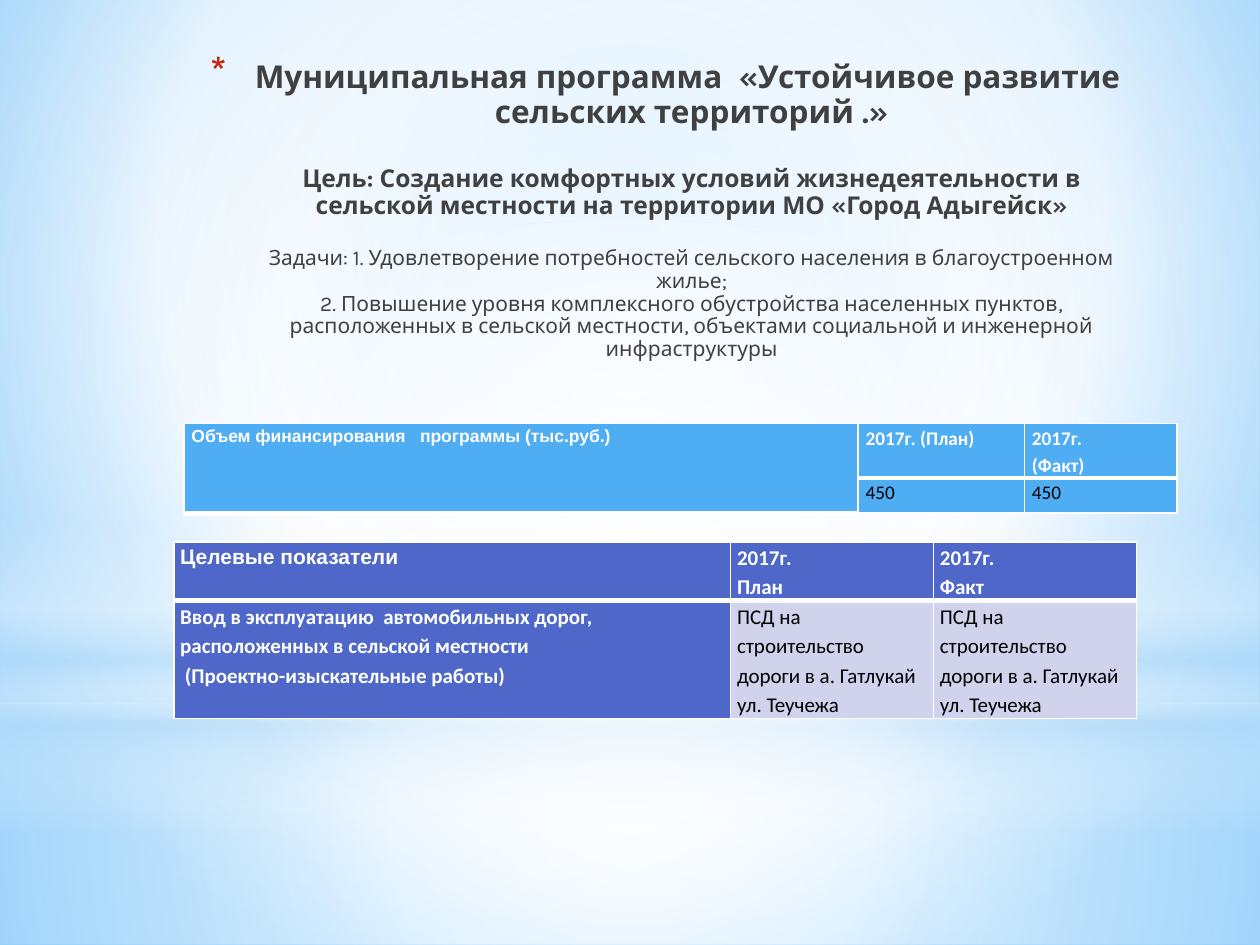
from lxml import etree
from pptx import Presentation
from pptx.dml.color import RGBColor
from pptx.enum.shapes import MSO_SHAPE
from pptx.enum.text import MSO_ANCHOR, MSO_AUTO_SIZE, PP_ALIGN
from pptx.oxml.ns import qn
from pptx.util import Inches, Pt

RECT, OVAL = MSO_SHAPE.RECTANGLE, MSO_SHAPE.OVAL
TOP, CENTER, NO_FIT = MSO_ANCHOR.TOP, PP_ALIGN.CENTER, MSO_AUTO_SIZE.NONE

WHITE = RGBColor(0xFF, 0xFF, 0xFF)
BLACK = RGBColor(0x00, 0x00, 0x00)
GRAY = RGBColor(0x40, 0x40, 0x40)
NAVY = RGBColor(0x21, 0x27, 0x45)
RED = RGBColor(0xC3, 0x26, 0x0C)
SKY = RGBColor(0x4F, 0xAD, 0xF3)
INDIGO = RGBColor(0x4E, 0x67, 0xC8)
LAVENDER = RGBColor(0xD0, 0xD3, 0xEB)
PALE = RGBColor(0xB4, 0xDC, 0xFA)
BG_INNER = RGBColor(0x9E, 0xD5, 0xFF)
BG_OUTER = RGBColor(0x5B, 0xB9, 0xFF)

MIDDLE = (50, 50, 50, 50)
BACKDROP = [
    (RECT, 5.58, 1.92, [(0, WHITE, 91), (37, WHITE, 76), (100, PALE, 79)], MIDDLE),
    (RECT, 0, 5.58, [(0, WHITE, 89), (48, WHITE, 62), (100, PALE, 79)], MIDDLE),
    (RECT, 4.12, 2.5, [(0, WHITE, 0), (29, WHITE, 30), (45, PALE, 40),
                       (55, WHITE, 26), (65, PALE, 60), (100, WHITE, 0)], None),
    (OVAL, 1.75, 5.58, [(0, WHITE, 100), (56, WHITE, 0)], MIDDLE),
]
TITLE_INK = [(0, BLACK, 100), (40, GRAY, 100), (100, NAVY, 65)]
TITLE = [
    ("Муниципальная программа  «Устойчивое развитие  сельских территорий .»", 18, True, 0),
    ("Цель: Создание комфортных условий жизнедеятельности в сельской местности "
     "на территории МО «Город Адыгейск»", 14, True, 21),
    ("Задачи: 1. Удовлетворение потребностей сельского населения в благоустроенном жилье;\v"
     "2. Повышение уровня комплексного обустройства населенных пунктов, расположенных "
     "в сельской местности, объектами социальной и инженерной инфраструктуры", 12, False, 16),
]

FUND_LABEL = (10, "Arial", WHITE, True, SKY)
FUND_HEAD = (11, "Calibri", WHITE, True, SKY)
FUND_VALUE = (11, "Calibri", BLACK, False, SKY)
FUNDING = [
    [("Объем финансирования   программы (тыс.руб.)", FUND_LABEL),
     ("2017г. (План)", FUND_HEAD), ("2017г.\n(Факт)", FUND_HEAD)],
    [None, ("450", FUND_VALUE), ("450", FUND_VALUE)],
]
GOAL_LABEL = (12, "Arial", WHITE, True, INDIGO)
GOAL_HEAD = (12, "Calibri", WHITE, True, INDIGO)
GOAL_VALUE = (12, "Calibri", BLACK, False, LAVENDER)
ROAD = ("ПСД на строительство дороги в а. Гатлукай ул. Теучежа", GOAL_VALUE)
GOALS = [
    [("Целевые показатели", GOAL_LABEL),
     ("2017г.\nПлан", GOAL_HEAD), ("2017г.\nФакт", GOAL_HEAD)],
    [("Ввод в эксплуатацию  автомобильных дорог, расположенных в сельской местности\n"
      " (Проектно-изыскательные работы)", GOAL_HEAD), ROAD, ROAD],
]


def add_node(parent, tag, **attrs):
    return etree.SubElement(parent, qn(tag), {k: str(v) for k, v in attrs.items()})


def apply_gradient(element, stops, focus=None):
    solid = element.xpath(".//a:solidFill")[0]
    grad = etree.Element(qn("a:gradFill"), rotWithShape="1")
    stop_list = add_node(grad, "a:gsLst")
    for position, color, opacity in stops:
        stop = add_node(stop_list, "a:gs", pos=position * 1000)
        clr = add_node(stop, "a:srgbClr", val=color)
        if opacity < 100:
            add_node(clr, "a:alpha", val=opacity * 1000)
    if focus:
        circle = add_node(grad, "a:path", path="circle")
        add_node(circle, "a:fillToRect", **{k: v * 1000 for k, v in zip("ltrb", focus)})
    else:
        add_node(grad, "a:lin", ang=90 * 60000, scaled=0)
    solid.getparent().replace(solid, grad)


def add_backdrop(s):
    s.background.fill.solid()
    apply_gradient(s.background._cSld, [(0, BG_INNER, 100), (60, WHITE, 100),
                                        (100, BG_OUTER, 100)], (20, 10, 20, 60))
    for kind, top, height, stops, focus in BACKDROP:
        sp = s.shapes.add_shape(kind, 0, Inches(top), Inches(10), Inches(height))
        sp.shadow.inherit = False
        sp.line.fill.background()
        sp.fill.solid()
        apply_gradient(sp._element, stops, focus)


def fill_title(s):
    sp = s.shapes.title
    s.shapes._spTree.append(sp._element)
    sp.left, sp.top, sp.width, sp.height = map(Inches, (1.54, 0.44, 7.55, 1.02))
    tf = sp.text_frame
    tf.word_wrap, tf.auto_size, tf.vertical_anchor = True, NO_FIT, TOP
    for i, (text, size, bold, gap) in enumerate(TITLE):
        p = tf.add_paragraph() if i else tf.paragraphs[0]
        p.text = text
        p.alignment = CENTER
        p.line_spacing = 0.9
        p.space_before = Pt(gap)
        p_pr = p._p.get_or_add_pPr()
        p_pr.set("marL", str(Inches(0.35)))
        p_pr.set("indent", str(0 if i else Inches(-0.35)))
        if i == 0:
            add_node(add_node(p_pr, "a:buClr"), "a:srgbClr", val=RED)
            add_node(p_pr, "a:buSzPct", val=128000)
            add_node(p_pr, "a:buChar", char="*")
        for r in p.runs:
            r.font.size, r.font.bold, r.font.name = Pt(size), bold, "Karla"
            r.font.fill.solid()
            apply_gradient(r._r, TITLE_INK)


def set_borders(cell, bottom):
    tc_pr = cell._tc.get_or_add_tcPr()
    for i, side in enumerate("LRTB"):
        width = bottom if side == "B" else 1
        ln = etree.Element(qn(f"a:ln{side}"), w=str(Pt(width)))
        add_node(add_node(ln, "a:solidFill"), "a:srgbClr", val=WHITE)
        tc_pr.insert(i, ln)


def fill_cell(cell, text, style, inset):
    size, font, color, bold, fill = style
    cell.text = text
    cell.margin_left = cell.margin_right = Inches(inset)
    cell.margin_top = cell.margin_bottom = 0
    cell.fill.solid()
    cell.fill.fore_color.rgb = fill
    for p in cell.text_frame.paragraphs:
        p.line_spacing = 1.15
        for r in p.runs:
            r.font.size, r.font.name, r.font.bold = Pt(size), font, bold
            r.font.color.rgb = color


def add_data_table(s, left, top, widths, heights, rows, inset):
    frame = s.shapes.add_table(len(heights), len(widths), Inches(left), Inches(top),
                               Inches(sum(widths)), Inches(sum(heights)))
    table = frame.table
    for column, width in zip(table.columns, widths):
        column.width = Inches(width)
    for i, (height, row) in enumerate(zip(heights, rows)):
        table.rows[i].height = Inches(height)
        for j, content in enumerate(row):
            cell = table.cell(i, j)
            if content:
                fill_cell(cell, *content, inset)
            set_borders(cell, 1 if i else 3)
    return table


def main():
    prs = Presentation()
    prs.slide_width, prs.slide_height = Inches(10), Inches(7.5)
    s = prs.slides.add_slide(prs.slide_layouts[5])
    add_backdrop(s)
    fill_title(s)
    funding = add_data_table(s, 1.46, 3.36, (5.35, 1.32, 1.21), (0.42, 0.28), FUNDING, 0.06)
    funding.cell(0, 0).merge(funding.cell(1, 0))
    add_data_table(s, 1.38, 4.3, (4.42, 1.61, 1.61), (0.41, 0.81), GOALS, 0.05)
    prs.save("out.pptx")


if __name__ == "__main__":
    main()
